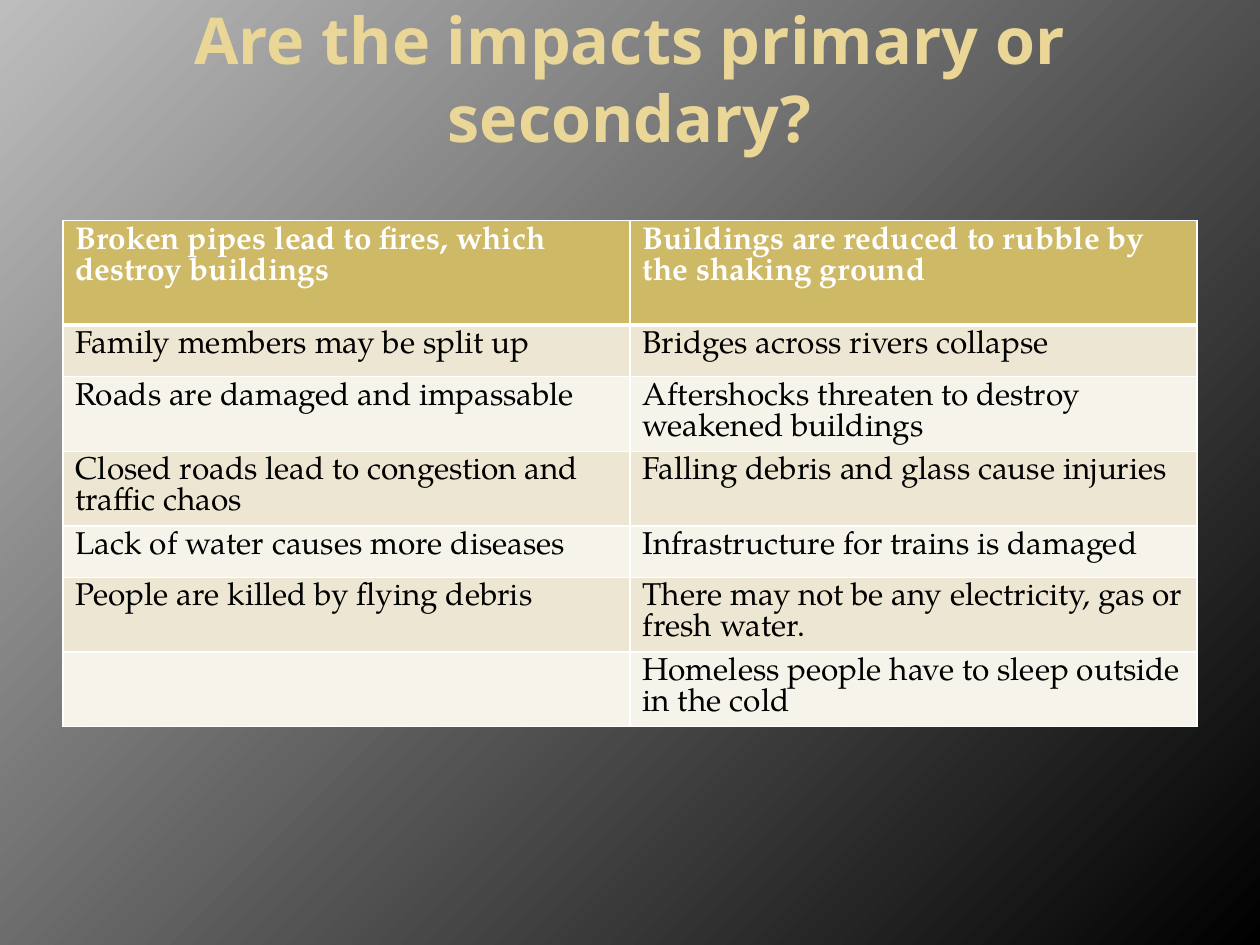
from lxml.etree import SubElement
from pptx import Presentation
from pptx.dml.color import RGBColor
from pptx.enum.text import MSO_ANCHOR, PP_ALIGN
from pptx.oxml import parse_xml
from pptx.oxml.ns import nsdecls, qn
from pptx.util import Inches, Pt


def color(value):
    return RGBColor.from_string(value)


def add_text(para, text, font, size, value, bold, spacing):
    para.line_spacing = Pt(spacing)
    span = para.add_run()
    span.text = text
    span.font.name = font
    span.font.size = Pt(size)
    span.font.bold = bold
    span.font.color.rgb = color(value)


deck = Presentation()
deck.slide_width = Inches(10)
deck.slide_height = Inches(7.5)
page = deck.slides.add_slide(deck.slide_layouts[5])

background = page.background.fill
background.gradient()
for stop, value, position in zip(background.gradient_stops, ("BDBDBD", "000000"), (0, 1)):
    stop.color.rgb = color(value)
    stop.position = position
gradient = page.element.find(".//" + qn("a:gradFill"))
direction = gradient.find(qn("a:lin"))
gradient.replace(direction, parse_xml(
    f'<a:path {nsdecls("a")} path="circle"><a:fillToRect r="100000" b="100000"/></a:path>'))

title = page.shapes.title
title.left, title.top = Inches(0.5), Inches(0.3)
title.width, title.height = Inches(9), Inches(1.25)
frame = title.text_frame
frame.word_wrap = True
frame.vertical_anchor = MSO_ANCHOR.MIDDLE
frame.margin_bottom = Inches(0.67)
heading = frame.paragraphs[0]
heading.alignment = PP_ALIGN.CENTER
add_text(heading, "Are the impacts primary or secondary?", "Open Sans", 36.9, "EAD696", True, 44.6)

impacts = [
    ("Broken pipes lead to fires, which destroy buildings",
     "Buildings are reduced to rubble by the shaking ground"),
    ("Family members may be split up", "Bridges across rivers collapse"),
    ("Roads are damaged and impassable", "Aftershocks threaten to destroy weakened buildings"),
    ("Closed roads lead to congestion and traffic chaos",
     "Falling debris and glass cause injuries"),
    ("Lack of water causes more diseases", "Infrastructure for trains is damaged"),
    ("People are killed by flying debris",
     "There may not be any electricity, gas or fresh water."),
    ("", "Homeless people have to sleep outside in the cold"),
]
table = page.shapes.add_table(
    len(impacts), 2, Inches(0.5), Inches(1.75), Inches(9), Inches(3.29)).table
for column in table.columns:
    column.width = Inches(4.5)

for row, texts in enumerate(impacts):
    header = row == 0
    table.rows[row].height = Inches(0.83 if header else 0.41)
    for col, text in enumerate(texts):
        cell = table.cell(row, col)
        properties = cell._tc.get_or_add_tcPr()
        for side in ("lnL", "lnR", "lnT", "lnB"):
            thick = (row, side) in ((0, "lnB"), (1, "lnT"))
            line = SubElement(properties, qn(f"a:{side}"), w=str(Pt(3 if thick else 1)))
            SubElement(SubElement(line, qn("a:solidFill")), qn("a:srgbClr"), val="FFFFFF")
        cell.fill.solid()
        cell.fill.fore_color.rgb = color("CEB966" if header else ("F6F3EA", "EDE6D3")[row % 2])
        if text:
            add_text(cell.text_frame.paragraphs[0], text, "TeX Gyre Pagella", 18,
                     "FFFFFF" if header else "000000", header, 17.7)

deck.save("out.pptx")
